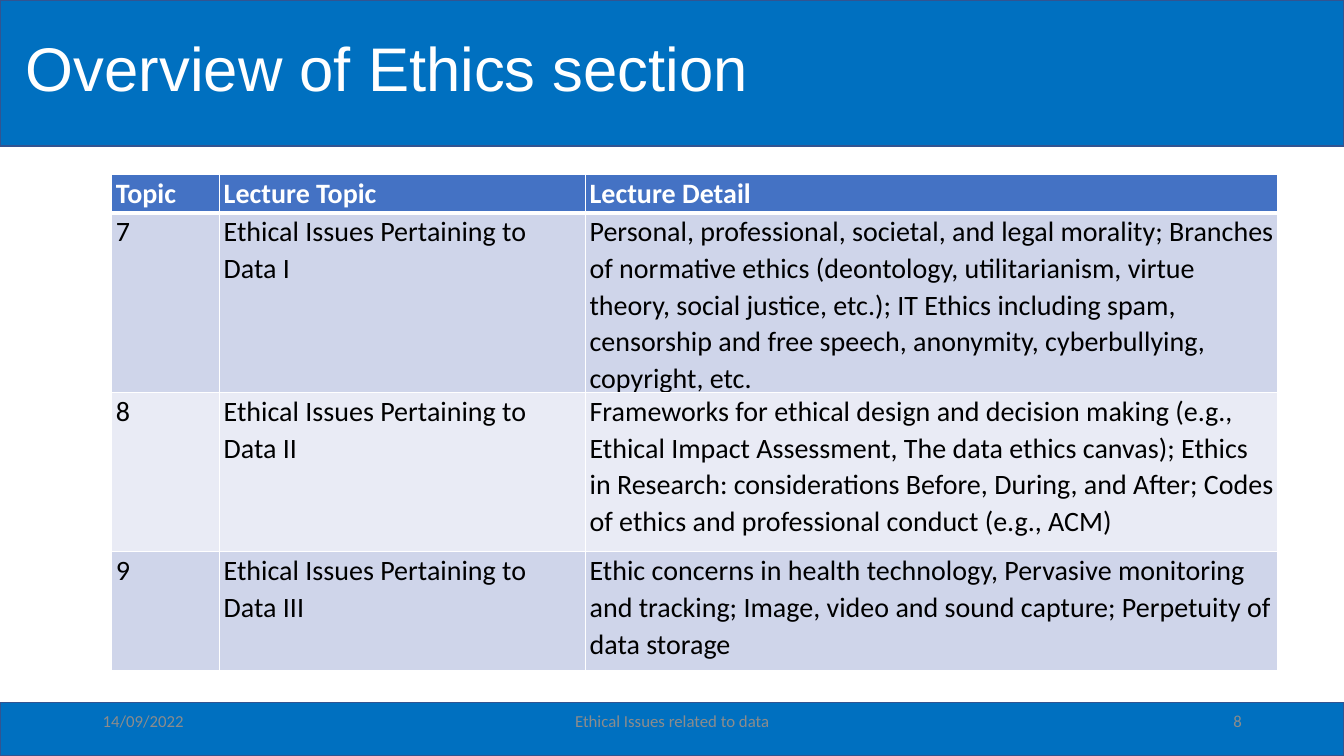
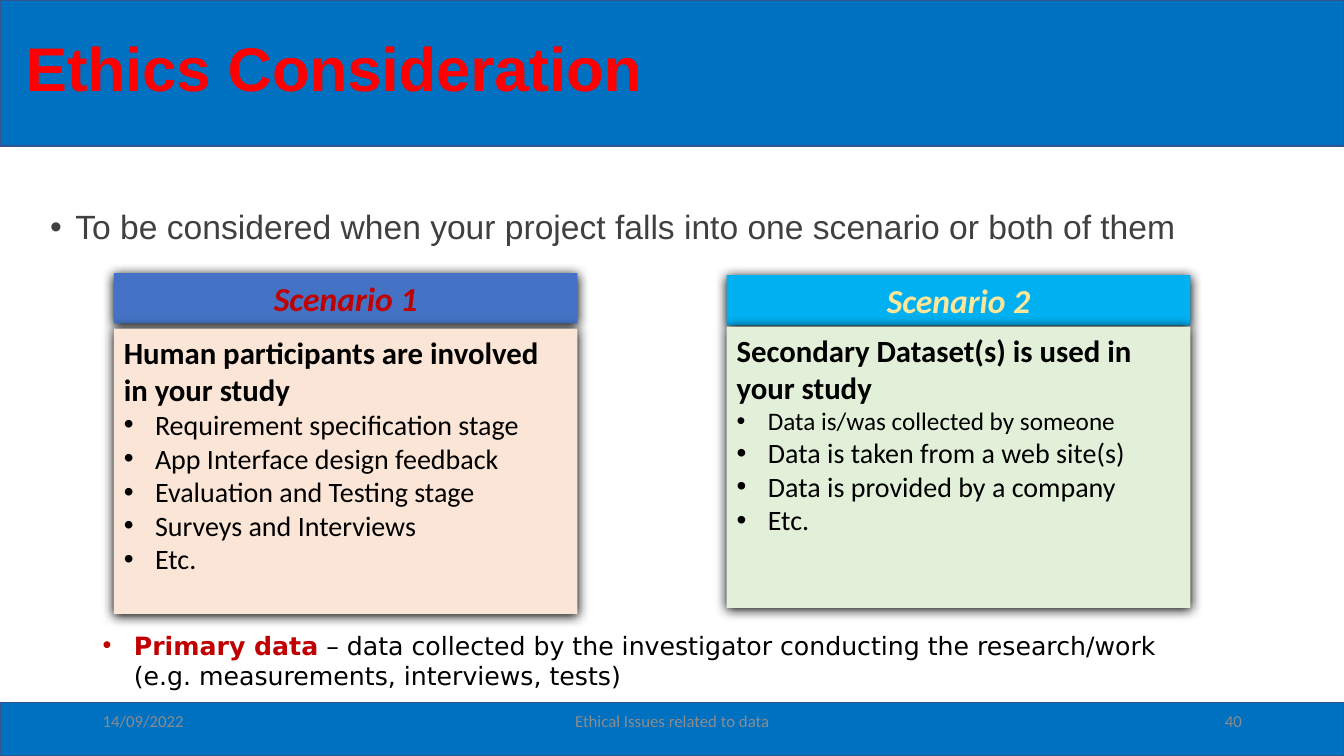
from pptx import Presentation
from pptx.dml.color import RGBColor
from pptx.enum.shapes import MSO_SHAPE
from pptx.enum.text import MSO_ANCHOR, PP_ALIGN
from pptx.oxml.ns import qn
from pptx.util import Pt
from lxml.etree import SubElement

EMU_PER_PX = 9144
SLIDE_W, SLIDE_H = 1333.33, 750

COLORS = {
    "band": "0070C0", "band_edge": "325491", "white": "FFFFFF", "black": "000000",
    "red": "FF0000", "dark_red": "C00000", "body": "404040", "footer": "8C8C8C",
    "blue": "4472C4", "sky": "00B0F0", "cream": "FFE699", "peach": "FBE5D6",
    "mint": "E2F0D9", "odd_row": "CFD5EA", "even_row": "E9EBF5",
}

BANDS = [(0, 145), (697, 53)]
DATE = "14/09/2022"
FOOTER = "Ethical Issues related to data"

TOPIC_COLUMNS = [("Topic", 107), ("Lecture Topic", 363), ("Lecture Detail", 687)]
TOPIC_ROW_HEIGHTS = [38, 158, 158, 118]
TOPICS = [
    ("7", "Ethical Issues Pertaining to Data I",
     "Personal, professional, societal, and legal morality; Branches of normative ethics "
     "(deontology, utilitarianism, virtue theory, social justice, etc.); IT Ethics including "
     "spam, censorship and free speech, anonymity, cyberbullying, copyright, etc."),
    ("8", "Ethical Issues Pertaining to Data II",
     "Frameworks for ethical design and decision making (e.g., Ethical Impact Assessment, "
     "The data ethics canvas); Ethics in Research: considerations Before, During, and After; "
     "Codes of ethics and professional conduct (e.g., ACM)"),
    ("9", "Ethical Issues Pertaining to Data III",
     "Ethic concerns in health technology, Pervasive monitoring and tracking; Image, video "
     "and sound capture; Perpetuity of data storage"),
]

CONSIDERATION = "To be considered when your project falls into one scenario or both of them"
SCENARIOS = [
    {"name": "Scenario 1", "name_color": "dark_red", "name_fill": "blue", "fill": "peach",
     "name_box": (113, 271, 460, 50), "box": (113, 326, 460, 283),
     "summary": "Human participants are involved in your study",
     "cases": [("Requirement specification stage", 20), ("App Interface design feedback", 20),
               ("Evaluation and Testing stage", 20), ("Surveys and Interviews", 20),
               ("Etc.", 20)]},
    {"name": "Scenario 2", "name_color": "cream", "name_fill": "sky", "fill": "mint",
     "name_box": (721, 273, 460, 50), "box": (721, 324, 460, 279),
     "summary": "Secondary Dataset(s) is used in your study",
     "cases": [("Data is/was collected by someone", 18), ("Data is taken from a web site(s)", 20),
               ("Data is provided by a company", 20), ("Etc.", 20)]},
]
PRIMARY_DATA = [
    ("Primary data", {"color": "dark_red", "bold": True}),
    (" – data collected by the investigator conducting the research/work "
     "(e.g. measurements, interviews, tests)", {}),
]


def px(*lengths):
    return [round(length * EMU_PER_PX) for length in lengths]


def rgb(name):
    return RGBColor.from_string(COLORS[name])


def write(frame, text, size=20, font="Calibri", color="black", bold=False, italic=False,
          align=None, spacing=None, after=None, hang=None, bullet_color=None):
    paragraph = frame.paragraphs[0]
    if paragraph.runs:
        paragraph = frame.add_paragraph()
    if hang:
        properties = paragraph._p.get_or_add_pPr()
        indent = px(hang)[0]
        properties.set("marL", str(indent))
        properties.set("indent", str(-indent))
        tint = SubElement(properties, qn("a:buClr"))
        SubElement(tint, qn("a:srgbClr"), val=COLORS[bullet_color or color])
        SubElement(properties, qn("a:buFont"), typeface="Arial")
        SubElement(properties, qn("a:buChar"), char="•")
    paragraph.alignment = align
    if spacing:
        paragraph.line_spacing = spacing
    if after:
        paragraph.space_after = Pt(after)
    parts = [(text, {})] if isinstance(text, str) else text
    for words, changes in parts:
        run = paragraph.add_run()
        run.text = words
        run.font.size = Pt(size)
        run.font.name = font
        run.font.bold = changes.get("bold", bold)
        run.font.italic = italic
        run.font.color.rgb = rgb(changes.get("color", color))


def add_text(slide, box, text, anchor=MSO_ANCHOR.TOP, **style):
    frame = slide.shapes.add_textbox(*px(*box)).text_frame
    frame.word_wrap = True
    frame.vertical_anchor = anchor
    write(frame, text, **style)


def add_box(shapes, box, fill, edge=None, shadow=False):
    panel = shapes.add_shape(MSO_SHAPE.RECTANGLE, *px(*box))
    panel.fill.solid()
    panel.fill.fore_color.rgb = rgb(fill)
    if edge:
        panel.line.color.rgb = rgb(edge)
        panel.line.width = Pt(1)
    else:
        panel.line.fill.background()
    panel.shadow.inherit = False
    if shadow:
        effects = panel._element.spPr.find(qn("a:effectLst"))
        outer = SubElement(effects, qn("a:outerShdw"), blurRad=str(Pt(8.5)),
                           dist=str(Pt(1)), dir="5400000", rotWithShape="0")
        SubElement(outer, qn("a:srgbClr"), val=COLORS["black"])
    frame = panel.text_frame
    frame.word_wrap = True
    frame.vertical_anchor = MSO_ANCHOR.TOP
    return frame


def add_slide(deck, title, number, **title_style):
    slide = deck.slides.add_slide(deck.slide_layouts[6])
    for top, height in BANDS:
        add_box(slide.shapes, (0, top, SLIDE_W, height), "band", edge="band_edge")
    add_text(slide, (16, -2, 1196, 145), title, MSO_ANCHOR.MIDDLE,
             size=44, font="Arial", spacing=0.9, **title_style)
    for left, width, text, align in [(92, 300, DATE, PP_ALIGN.LEFT),
                                     (442, 450, FOOTER, PP_ALIGN.CENTER),
                                     (942, 300, number, PP_ALIGN.RIGHT)]:
        add_text(slide, (left, 695, width, 40), text, MSO_ANCHOR.MIDDLE,
                 size=12, color="footer", align=align)
    return slide


def format_cell(cell, text, fill, bottom_width, **style):
    cell.margin_left, cell.margin_right, cell.margin_top, cell.margin_bottom = px(4, 4, 0, 0)
    cell.fill.solid()
    cell.fill.fore_color.rgb = rgb(fill)
    properties = cell._tc.get_or_add_tcPr()
    for position, side in enumerate(("lnL", "lnR", "lnT", "lnB")):
        width = bottom_width if side == "lnB" else 1
        border = SubElement(properties, qn("a:" + side), w=str(Pt(width)))
        paint = SubElement(border, qn("a:solidFill"))
        SubElement(paint, qn("a:srgbClr"), val=COLORS["white"])
        properties.insert(position, border)
    write(cell.text_frame, text, spacing=1.07, after=6, **style)


def add_topics(slide):
    headings, widths = zip(*TOPIC_COLUMNS)
    rows = [headings] + TOPICS
    box = (111, 173, sum(widths), sum(TOPIC_ROW_HEIGHTS))
    table = slide.shapes.add_table(len(rows), len(widths), *px(*box)).table
    for column, width in zip(table.columns, px(*widths)):
        column.width = width
    for row, height in zip(table.rows, px(*TOPIC_ROW_HEIGHTS)):
        row.height = height
    for r, row in enumerate(rows):
        for c, text in enumerate(row):
            if r == 0:
                format_cell(table.cell(r, c), text, "blue", 3, color="white", bold=True,
                            align=PP_ALIGN.JUSTIFY)
            else:
                format_cell(table.cell(r, c), text, "odd_row" if r % 2 else "even_row", 1)


def add_scenario(slide, scenario):
    shapes = slide.shapes.add_group_shape().shapes
    heading = add_box(shapes, scenario["name_box"], scenario["name_fill"], shadow=True)
    write(heading, scenario["name"], size=24, color=scenario["name_color"],
          bold=True, italic=True, align=PP_ALIGN.CENTER)
    details = add_box(shapes, scenario["box"], scenario["fill"], shadow=True)
    write(details, scenario["summary"], size=22, bold=True, align=PP_ALIGN.LEFT)
    for case, size in scenario["cases"]:
        write(details, case, size=size, hang=31, align=PP_ALIGN.LEFT)


def main():
    deck = Presentation()
    deck.slide_width, deck.slide_height = px(SLIDE_W, SLIDE_H)

    overview = add_slide(deck, "Overview of Ethics section", "8", color="white")
    add_topics(overview)

    ethics = add_slide(deck, "Ethics Consideration", "40", color="red", bold=True)
    add_text(ethics, (40, 204, 1202, 85), CONSIDERATION, size=24, font="Arial",
             color="body", spacing=0.9, hang=25)
    for scenario in SCENARIOS:
        add_scenario(ethics, scenario)
    add_text(ethics, (92, 620, 1074, 71), PRIMARY_DATA, size=18, font="DejaVu Sans",
             hang=31, bullet_color="dark_red")

    deck.save("out.pptx")


if __name__ == "__main__":
    main()
